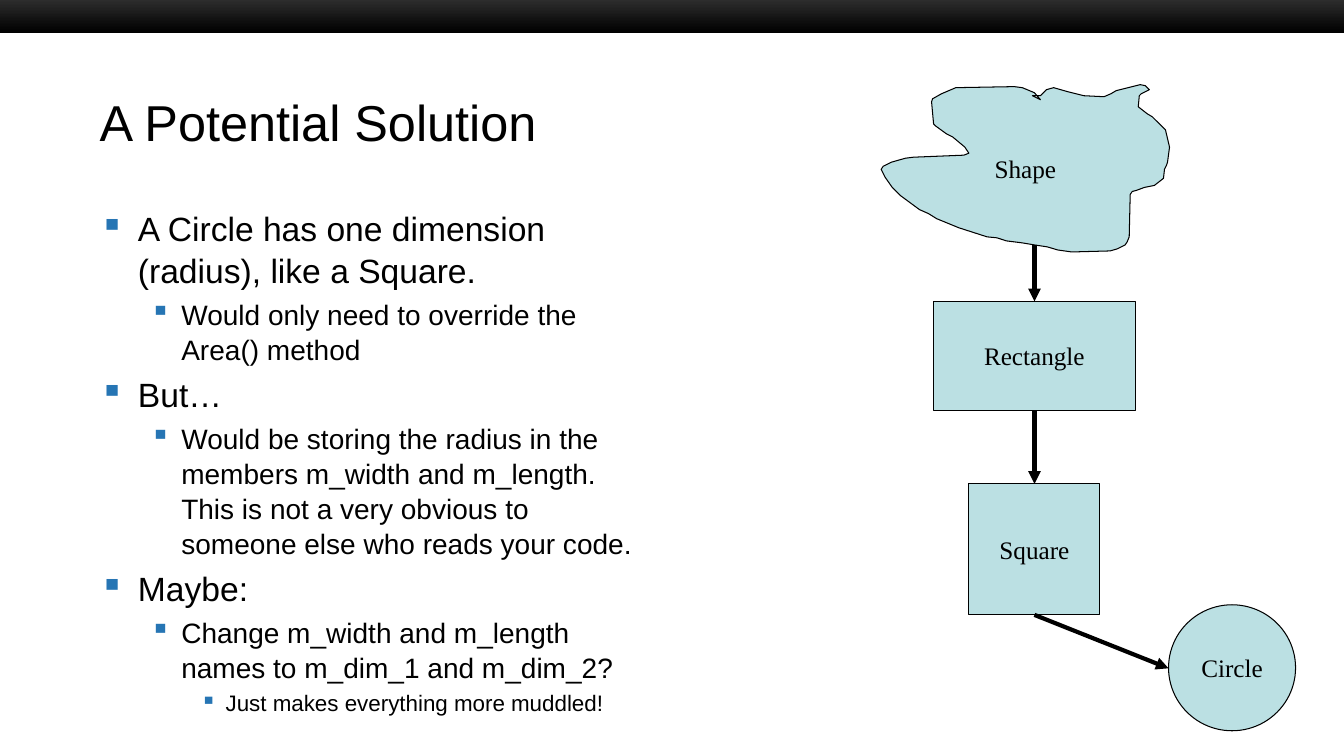
from pptx import Presentation
from pptx.dml.color import RGBColor
from pptx.enum.shapes import MSO_CONNECTOR, MSO_SHAPE
from pptx.enum.text import MSO_ANCHOR, PP_ALIGN
from pptx.oxml.ns import qn
from pptx.util import Inches, Pt
from lxml.etree import SubElement

BLACK, PALE_BLUE, BULLET_BLUE = "000000", "BBE0E3", "2675B4"
LEVELS = [(24, 0.38, 0.38), (20, 0.81, 0.31), (16, 1.25, 0.25)]
POINTS = [
    (0, "A Circle has one dimension (radius), like a Square."),
    (1, "Would only need to override the Area() method"),
    (0, "But…"),
    (1, "Would be storing the radius in the members m_width and m_length. "
        "This is not a very obvious to someone else who reads your code."),
    (0, "Maybe:"),
    (1, "Change m_width and m_length names to m_dim_1 and m_dim_2?"),
    (2, "Just makes everything more muddled!"),
]
BLOB_OUTLINE = [
    (1032, 99), (1026, 92), (1014, 87), (1006, 86), (948, 87), (934, 93),
    (925, 98), (924, 101), (926, 123), (928, 125), (939, 133), (945, 136),
    (957, 146), (961, 152), (956, 154), (906, 156), (898, 157), (884, 161),
    (876, 165), (874, 168), (878, 176), (885, 186), (893, 194), (912, 208),
    (921, 212), (929, 217), (951, 226), (979, 235), (989, 236), (998, 239),
    (1014, 241), (1026, 243), (1039, 245), (1049, 248), (1063, 250),
    (1101, 249), (1108, 247), (1116, 243), (1118, 240), (1120, 235),
    (1121, 193), (1123, 190), (1127, 189), (1135, 186), (1145, 184),
    (1154, 177), (1155, 168), (1157, 164), (1158, 161), (1160, 146),
    (1156, 129), (1148, 121), (1143, 116), (1138, 113), (1129, 106),
    (1130, 95), (1132, 93), (1140, 89), (1136, 85), (1131, 84), (1107, 90),
    (1102, 93), (1095, 96), (1075, 95), (1067, 93), (1059, 91), (1045, 87),
    (1038, 89), (1035, 92), (1032, 95), (1024, 95),
]


def color(hex_code):
    """Turn a hex string into a colour."""
    return RGBColor.from_string(hex_code)


def style_font(paragraph, size, face):
    """Give a paragraph its black font."""
    paragraph.font.size = Pt(size)
    paragraph.font.name = face
    paragraph.font.color.rgb = color(BLACK)


def add_top_bar(slide):
    """Draw the dark gradient band along the top edge."""
    bar = slide.shapes.add_shape(
        MSO_SHAPE.RECTANGLE, 0, Inches(-0.05), Inches(13.33), Inches(0.38))
    bar.shadow.inherit = False
    bar.line.fill.background()
    bar.fill.gradient()
    bar.fill.gradient_angle = 270
    for stop, shade in zip(bar.fill.gradient_stops, ("333333", BLACK)):
        stop.color.rgb = color(shade)


def add_text_frame(slide, left, top, width, height):
    """Add a wrapping text box and return its text frame."""
    box = slide.shapes.add_textbox(
        Inches(left), Inches(top), Inches(width), Inches(height))
    box.text_frame.word_wrap = True
    return box.text_frame


def add_title(slide, wording):
    """Write the slide title."""
    frame = add_text_frame(slide, 0.89, 0.83, 11.56, 0.75)
    frame.vertical_anchor = MSO_ANCHOR.MIDDLE
    frame.text = wording
    style_font(frame.paragraphs[0], 36, "Arial")


def set_bullet(paragraph, indent, hanging):
    """Give a paragraph a blue square bullet and a hanging indent."""
    properties = paragraph._p.get_or_add_pPr()
    properties.set("marL", str(Inches(indent)))
    properties.set("indent", str(-Inches(hanging)))
    bullet_color = SubElement(properties, qn("a:buClr"))
    SubElement(bullet_color, qn("a:srgbClr"), val=BULLET_BLUE)
    SubElement(properties, qn("a:buChar"), char="▪")


def add_points(slide, points):
    """Write the bulleted outline."""
    frame = add_text_frame(slide, 0.89, 2, 5.67, 4.25)
    for number, (level, wording) in enumerate(points):
        paragraph = frame.add_paragraph() if number else frame.paragraphs[0]
        size, indent, hanging = LEVELS[level]
        paragraph.text = wording
        paragraph.level = level
        paragraph.line_spacing = 1.04
        if number:
            paragraph.space_before = Pt(size * 0.2)
        set_bullet(paragraph, indent, hanging)
        style_font(paragraph, size, "Arial")


def style_node(node, label):
    """Fill, outline and label one class of the hierarchy."""
    node.shadow.inherit = False
    node.fill.solid()
    node.fill.fore_color.rgb = color(PALE_BLUE)
    node.line.color.rgb = color(BLACK)
    node.line.width = Pt(0.75)
    frame = node.text_frame
    frame.text = label
    frame.vertical_anchor = MSO_ANCHOR.MIDDLE
    frame.paragraphs[0].alignment = PP_ALIGN.CENTER
    style_font(frame.paragraphs[0], 18, "Times New Roman")


def add_node(slide, preset, label, left, top, width, height):
    """Add a class drawn as a preset shape."""
    node = slide.shapes.add_shape(
        preset, Inches(left), Inches(top), Inches(width), Inches(height))
    style_node(node, label)
    return node


def add_blob(slide, label):
    """Add the irregular base class, outlined in hundredths of an inch."""
    builder = slide.shapes.build_freeform(
        *BLOB_OUTLINE[0], scale=Inches(0.01))
    builder.add_line_segments(BLOB_OUTLINE[1:], close=True)
    style_node(builder.convert_to_shape(), label)


def add_arrow(slide, start, end, parent=None, child=None):
    """Draw an arrow from the foot of a parent to the top of a child."""
    arrow = slide.shapes.add_connector(
        MSO_CONNECTOR.STRAIGHT, *map(Inches, start + end))
    if parent is not None:
        arrow.begin_connect(parent, 2)
    if child is not None:
        arrow.end_connect(child, 0)
    arrow.line.color.rgb = color(BLACK)
    arrow.line.width = Pt(3)
    SubElement(arrow.line._get_or_add_ln(), qn("a:tailEnd"), type="triangle")
    SubElement(arrow._element.spPr, qn("a:effectLst"))


def main():
    """Build and save the slide."""
    deck = Presentation()
    deck.slide_width, deck.slide_height = Inches(13.33), Inches(7.5)
    slide = deck.slides.add_slide(deck.slide_layouts[6])
    add_top_bar(slide)
    add_title(slide, "A Potential Solution")
    add_points(slide, POINTS)

    add_blob(slide, "Shape")
    rectangle = add_node(
        slide, MSO_SHAPE.RECTANGLE, "Rectangle", 9.26, 2.99, 2, 1.08)
    square = add_node(
        slide, MSO_SHAPE.RECTANGLE, "Square", 9.61, 4.8, 1.3, 1.3)
    add_node(slide, MSO_SHAPE.OVAL, "Circle", 11.59, 6, 1.26, 1.25)

    add_arrow(slide, (10.26, 2.43), (10.26, 2.99), child=rectangle)
    add_arrow(slide, (10.26, 4.07), (10.26, 4.8), rectangle, square)
    add_arrow(slide, (10.26, 6.1), (11.59, 6.63), parent=square)
    deck.save("out.pptx")


if __name__ == "__main__":
    main()
